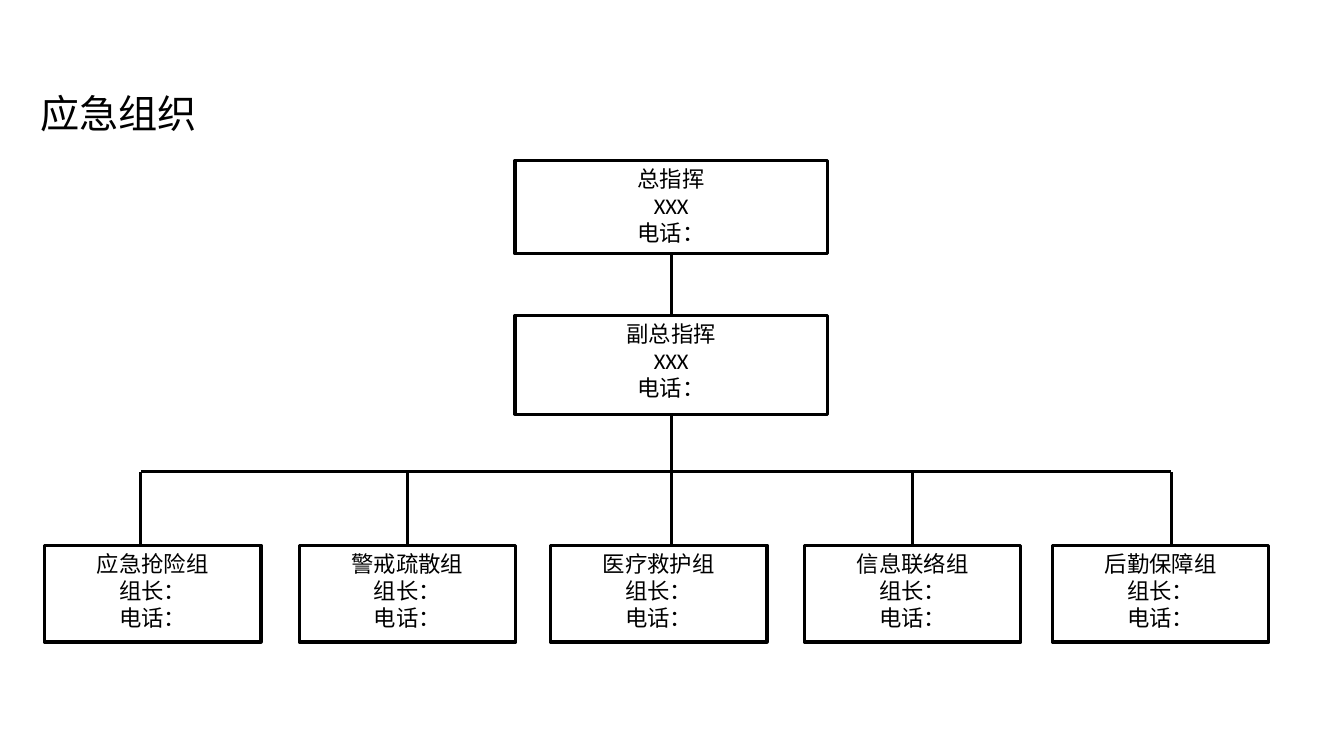
from dataclasses import dataclass

from lxml.etree import SubElement
from pptx import Presentation
from pptx.dml.color import RGBColor
from pptx.enum.shapes import MSO_CONNECTOR, MSO_SHAPE
from pptx.enum.text import MSO_ANCHOR, MSO_AUTO_SIZE, PP_ALIGN
from pptx.oxml.ns import qn
from pptx.util import Cm, Pt


@dataclass(frozen=True)
class Theme:
    ink: RGBColor = RGBColor(0, 0, 0)
    paper: RGBColor = RGBColor(255, 255, 255)
    latin: str = "Calibri"
    chinese: str = "Noto Sans CJK SC"
    title_size: float = 28
    body_size: float = 16
    border: float = 2.25
    link: float = 2


THEME = Theme()
HEADING = "应急组织"
CHIEF = ["总指挥", "XXX", "电话："]
DEPUTY = ["副总指挥", "XXX", "电话："]
GROUP_DETAILS = ["组长：", "电话："]
GROUPS = [
    ("应急抢险组", 1.12, -0.3),
    ("警戒疏散组", 7.54, 0),
    ("医疗救护组", 13.87, 0.32),
    ("信息联络组", 20.27, 0),
    ("后勤保障组", 26.52, 0.27),
]

LEADER_LEFT, LEADER_WIDTH = 12.98, 7.87
CHIEF_TOP, CHIEF_HEIGHT = 4.04, 2.36
DEPUTY_TOP, DEPUTY_HEIGHT = 7.95, 2.49
GROUP_TOP, GROUP_WIDTH, GROUP_HEIGHT = 13.74, 5.46, 2.44
BUS_TOP = 11.89
TRUNK = LEADER_LEFT + LEADER_WIDTH / 2


def write(frame, lines, size=THEME.body_size, latin=THEME.latin,
          align=PP_ALIGN.CENTER, wrap=True, fit=MSO_AUTO_SIZE.NONE):
    frame.word_wrap = wrap
    frame.auto_size = fit
    frame.vertical_anchor = MSO_ANCHOR.TOP
    for index, line in enumerate(lines):
        paragraph = frame.add_paragraph() if index else frame.paragraphs[0]
        paragraph.alignment = align
        run = paragraph.add_run()
        run.text = line
        run.font.size = Pt(size)
        run.font.color.rgb = THEME.ink
        run.font.name = latin
        SubElement(run.font._element, qn("a:ea"), typeface=THEME.chinese)


def add_unit(slide, lines, left, top, width, height):
    unit = slide.shapes.add_shape(
        MSO_SHAPE.RECTANGLE, Cm(left), Cm(top), Cm(width), Cm(height))
    unit.shadow.inherit = False
    unit.fill.solid()
    unit.fill.fore_color.rgb = THEME.paper
    unit.line.color.rgb = THEME.ink
    unit.line.width = Pt(THEME.border)
    write(unit.text_frame, lines)
    return unit


def add_link(slide, start, end, above=None, below=None):
    link = slide.shapes.add_connector(
        MSO_CONNECTOR.STRAIGHT, *(Cm(value) for value in start + end))
    link.line.color.rgb = THEME.ink
    link.line.width = Pt(THEME.link)
    SubElement(link._element.spPr, qn("a:effectLst"))
    if above is not None:
        link.begin_connect(above, 2)
    if below is not None:
        link.end_connect(below, 0)


def main():
    deck = Presentation()
    deck.slide_width, deck.slide_height = Cm(33.87), Cm(19.05)
    slide = deck.slides.add_slide(deck.slide_layouts[5])

    heading = slide.shapes.title
    heading.left, heading.top = Cm(0.76), Cm(2.13)
    heading.width, heading.height = Cm(4.5), Cm(1.45)
    write(heading.text_frame, [HEADING], size=THEME.title_size,
          latin=THEME.chinese, align=PP_ALIGN.LEFT, wrap=False,
          fit=MSO_AUTO_SIZE.SHAPE_TO_FIT_TEXT)

    chief = add_unit(slide, CHIEF, LEADER_LEFT, CHIEF_TOP,
                     LEADER_WIDTH, CHIEF_HEIGHT)
    deputy = add_unit(slide, DEPUTY, LEADER_LEFT, DEPUTY_TOP,
                      LEADER_WIDTH, DEPUTY_HEIGHT)
    add_link(slide, (TRUNK, CHIEF_TOP + CHIEF_HEIGHT), (TRUNK, DEPUTY_TOP),
             above=chief, below=deputy)
    add_link(slide, (TRUNK, DEPUTY_TOP + DEPUTY_HEIGHT), (TRUNK, BUS_TOP),
             above=deputy)

    drops = [left + GROUP_WIDTH / 2 + offset for _, left, offset in GROUPS]
    add_link(slide, (drops[0], BUS_TOP), (drops[-1], BUS_TOP))
    for (name, left, offset), drop in zip(GROUPS, drops):
        group = add_unit(slide, [name] + GROUP_DETAILS, left, GROUP_TOP,
                         GROUP_WIDTH, GROUP_HEIGHT)
        add_link(slide, (drop, BUS_TOP), (drop, GROUP_TOP),
                 below=None if offset else group)

    deck.save("out.pptx")


if __name__ == "__main__":
    main()
